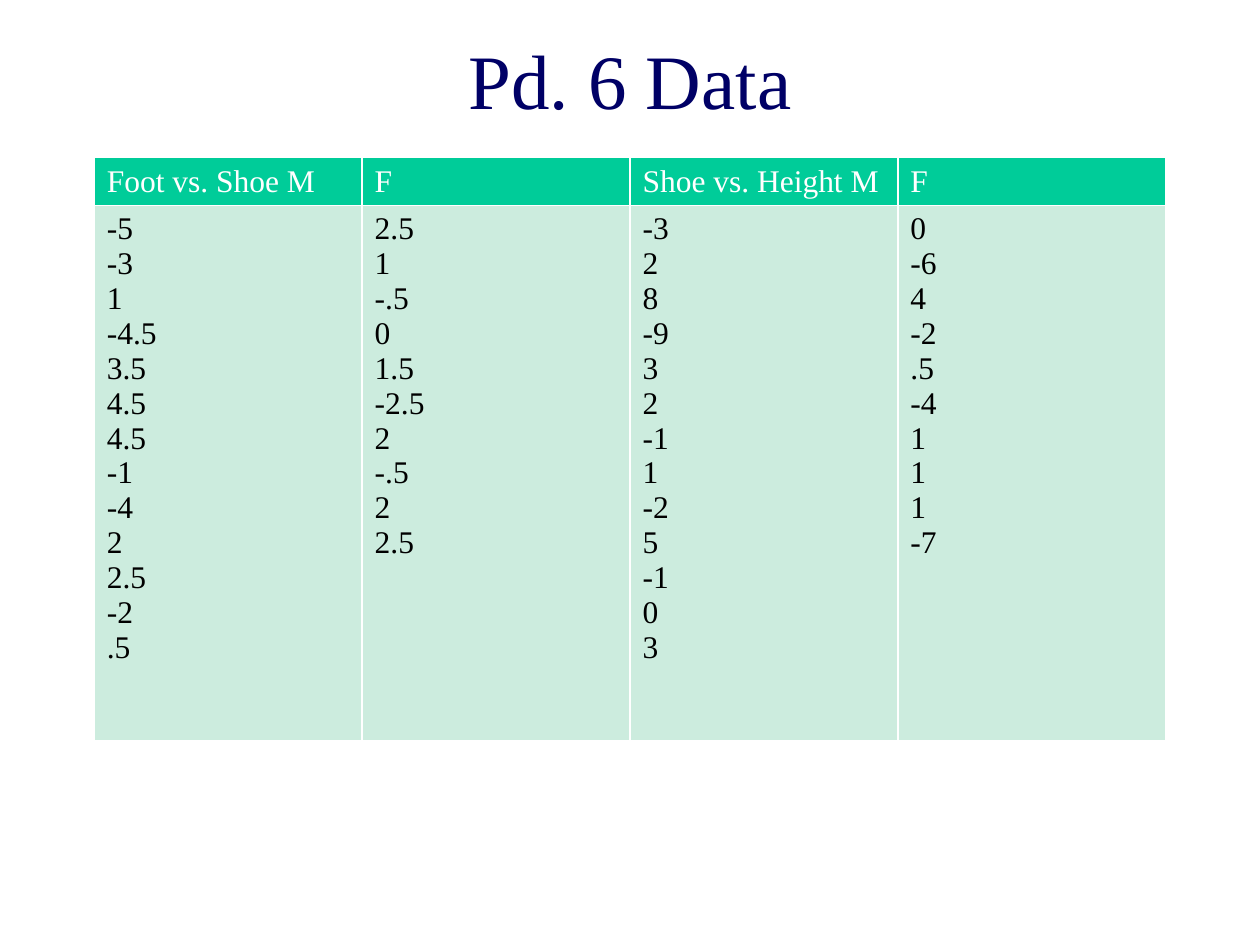
"""Build the Pd. 6 Data slide: a title over a four-column table of differences."""
from dataclasses import dataclass

import pptx
import pptx.dml.color
import pptx.enum.text
import pptx.oxml
import pptx.oxml.ns
import pptx.util
from pptx.util import Cm


@dataclass(frozen=True)
class Theme:
    font: str = "Times New Roman"
    title_size: int = 44
    table_size: int = 18
    title: str = "000066"
    header_text: str = "FFFFFF"
    header_fill: str = "00CC99"
    body_text: str = "000000"
    body_fill: str = "CCECDE"
    border: str = "FFFFFF"
    border_width: int = 1


def add_run(paragraph, text, size, color):
    run = paragraph.add_run()
    run.text = text
    run.font.name = theme.font
    run.font.size = pptx.util.Pt(size)
    run.font.bold = False
    run.font.color.rgb = pptx.dml.color.RGBColor.from_string(color)


def fill_cell(cell, lines, text_color, fill_color):
    properties = cell._tc.get_or_add_tcPr()
    for side in ("lnL", "lnR", "lnT", "lnB"):
        properties.append(pptx.oxml.parse_xml(
            f'<a:{side} {pptx.oxml.ns.nsdecls("a")} w="{pptx.util.Pt(theme.border_width)}">'
            f'<a:solidFill><a:srgbClr val="{theme.border}"/></a:solidFill></a:{side}>'))
    cell.fill.solid()
    cell.fill.fore_color.rgb = pptx.dml.color.RGBColor.from_string(fill_color)
    for index, line in enumerate(lines):
        paragraph = cell.text_frame.add_paragraph() if index else cell.text_frame.paragraphs[0]
        add_run(paragraph, line, theme.table_size, text_color)


theme = Theme()
differences = [
    ("Foot vs. Shoe M", ["-5", "-3", "1", "-4.5", "3.5", "4.5", "4.5",
                         "-1", "-4", "2", "2.5", "-2", ".5"]),
    ("F", ["2.5", "1", "-.5", "0", "1.5", "-2.5", "2", "-.5", "2", "2.5"]),
    ("Shoe vs. Height M", ["-3", "2", "8", "-9", "3", "2", "-1",
                           "1", "-2", "5", "-1", "0", "3"]),
    ("F", ["0", "-6", "4", "-2", ".5", "-4", "1", "1", "1", "-7"]),
]

presentation = pptx.Presentation()
presentation.slide_width, presentation.slide_height = Cm(25.4), Cm(19.05)
slide = presentation.slides.add_slide(presentation.slide_layouts[5])

left, width = Cm(1.9), Cm(21.6)
title_height, header_height, body_height = Cm(3.18), Cm(0.96), Cm(10.8)

heading = slide.shapes.title
heading.left, heading.top, heading.width, heading.height = left, 0, width, title_height
heading.text_frame.vertical_anchor = pptx.enum.text.MSO_ANCHOR.MIDDLE
heading_line = heading.text_frame.paragraphs[0]
heading_line.alignment = pptx.enum.text.PP_ALIGN.CENTER
add_run(heading_line, "Pd. 6 Data", theme.title_size, theme.title)

data = slide.shapes.add_table(2, len(differences), left, title_height, width,
                              header_height + body_height).table
data.horz_banding = False
data.rows[0].height, data.rows[1].height = header_height, body_height
for column, (label, values) in enumerate(differences):
    fill_cell(data.cell(0, column), [label], theme.header_text, theme.header_fill)
    fill_cell(data.cell(1, column), values, theme.body_text, theme.body_fill)

presentation.save("out.pptx")
